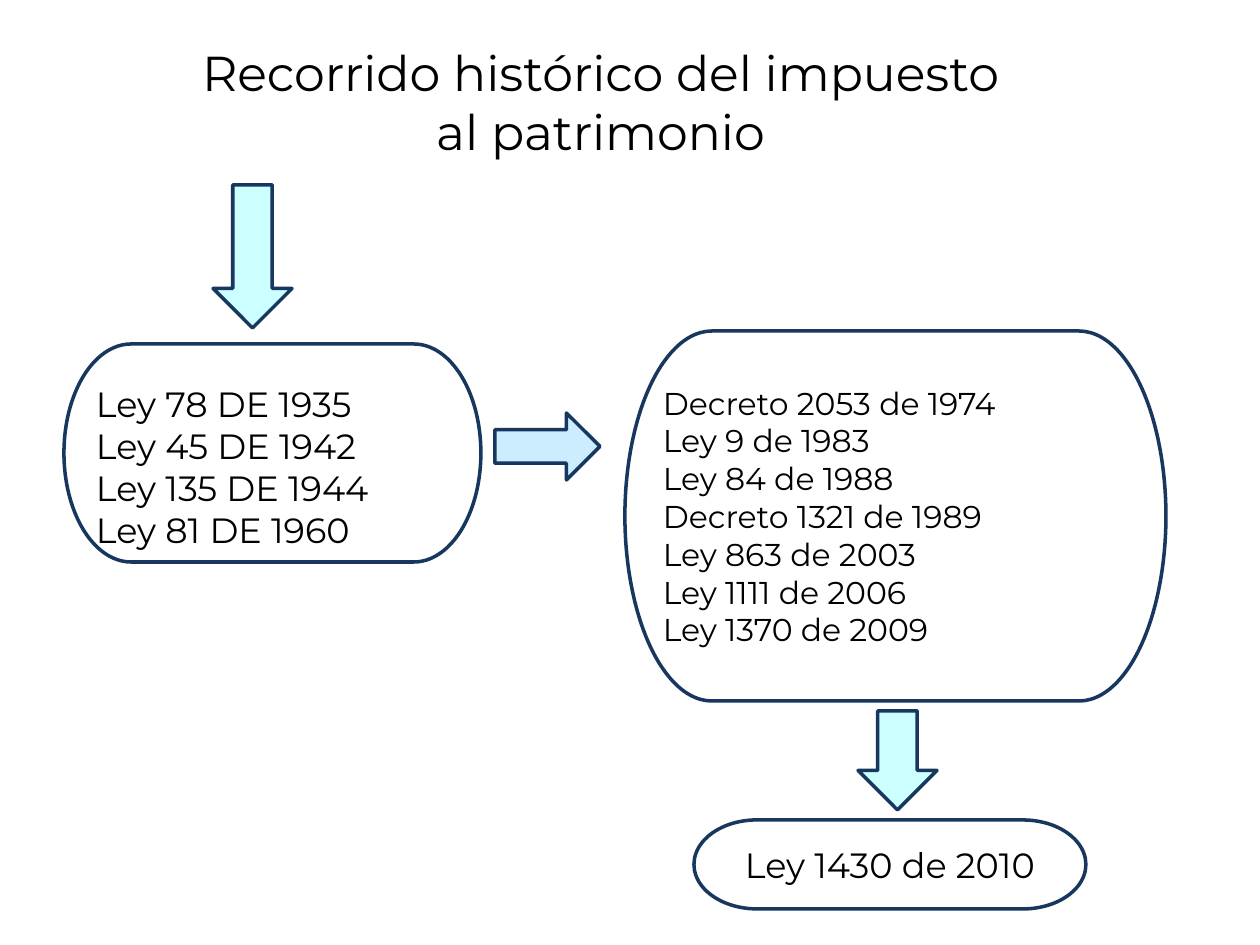
import pptx
import pptx.util
import pptx.dml.color
import pptx.enum.shapes
import pptx.enum.text

PX = 914400 // 126
SHAPES = pptx.enum.shapes.MSO_SHAPE
ANCHOR = pptx.enum.text.MSO_ANCHOR
ALIGN = pptx.enum.text.PP_ALIGN


def paint(target, fill, line):
    target.fill.solid()
    target.fill.fore_color.rgb = pptx.dml.color.RGBColor.from_string(fill)
    target.line.color.rgb = pptx.dml.color.RGBColor.from_string(line)
    target.line.width = pptx.util.Pt(2)


def write(target, lines, size, align, anchor):
    frame = target.text_frame
    frame.word_wrap = True
    frame.auto_size = pptx.enum.text.MSO_AUTO_SIZE.NONE
    frame.vertical_anchor = anchor
    for index, line in enumerate(lines):
        paragraph = frame.add_paragraph() if index else frame.paragraphs[0]
        paragraph.alignment = align
        paragraph.line_spacing = 1.0
        paragraph.space_before = pptx.util.Pt(0)
        run = paragraph.add_run()
        run.text = line
        run.font.name = "Montserrat"
        run.font.size = pptx.util.Pt(size)
        run.font.color.rgb = pptx.dml.color.RGBColor.from_string("000000")


presentation = pptx.Presentation()
presentation.slide_width = 1260 * PX
presentation.slide_height = 945 * PX
slide = presentation.slides.add_slide(presentation.slide_layouts[5])

title = slide.shapes.title
title.left, title.top, title.width, title.height = [n * PX for n in (124, 48, 953, 107)]
title.text_frame.margin_left = title.text_frame.margin_right = 58 * PX
paint(title, "FFFFFF", "FFFFFF")
write(title, ["Recorrido histórico del impuesto al patrimonio"], 28, ALIGN.CENTER, ANCHOR.MIDDLE)

early_laws = ["Ley 78 DE 1935", "Ley 45 DE 1942", "Ley 135 DE 1944", "Ley 81 DE 1960"]
later_laws = [
    "Decreto 2053 de 1974",
    "Ley 9 de 1983",
    "Ley 84 de 1988",
    "Decreto 1321 de 1989",
    "Ley 863 de 2003",
    "Ley 1111 de 2006",
    "Ley 1370 de 2009",
]
stages = [
    ((64, 344, 417, 218), early_laws, 20, ALIGN.JUSTIFY, ANCHOR.TOP),
    ((625, 331, 541, 370), later_laws, 18, ALIGN.JUSTIFY, ANCHOR.MIDDLE),
    ((694, 820, 392, 89), ["Ley 1430 de 2010"], 20, ALIGN.CENTER, ANCHOR.MIDDLE),
]
for box, laws, size, align, anchor in stages:
    stage = slide.shapes.add_shape(SHAPES.FLOWCHART_TERMINATOR, *[n * PX for n in box])
    stage.shadow.inherit = False
    paint(stage, "FFFFFF", "17375E")
    write(stage, laws, size, align, anchor)

arrows = [
    (SHAPES.DOWN_ARROW, (213, 185, 79, 143), "CCFFFF"),
    (SHAPES.DOWN_ARROW, (858, 711, 79, 99), "CCFFFF"),
    (SHAPES.RIGHT_ARROW, (495, 413, 105, 67), "CCECFF"),
]
for kind, box, fill in arrows:
    arrow = slide.shapes.add_shape(kind, *[n * PX for n in box])
    arrow.shadow.inherit = False
    paint(arrow, fill, "17375E")

presentation.save("out.pptx")
